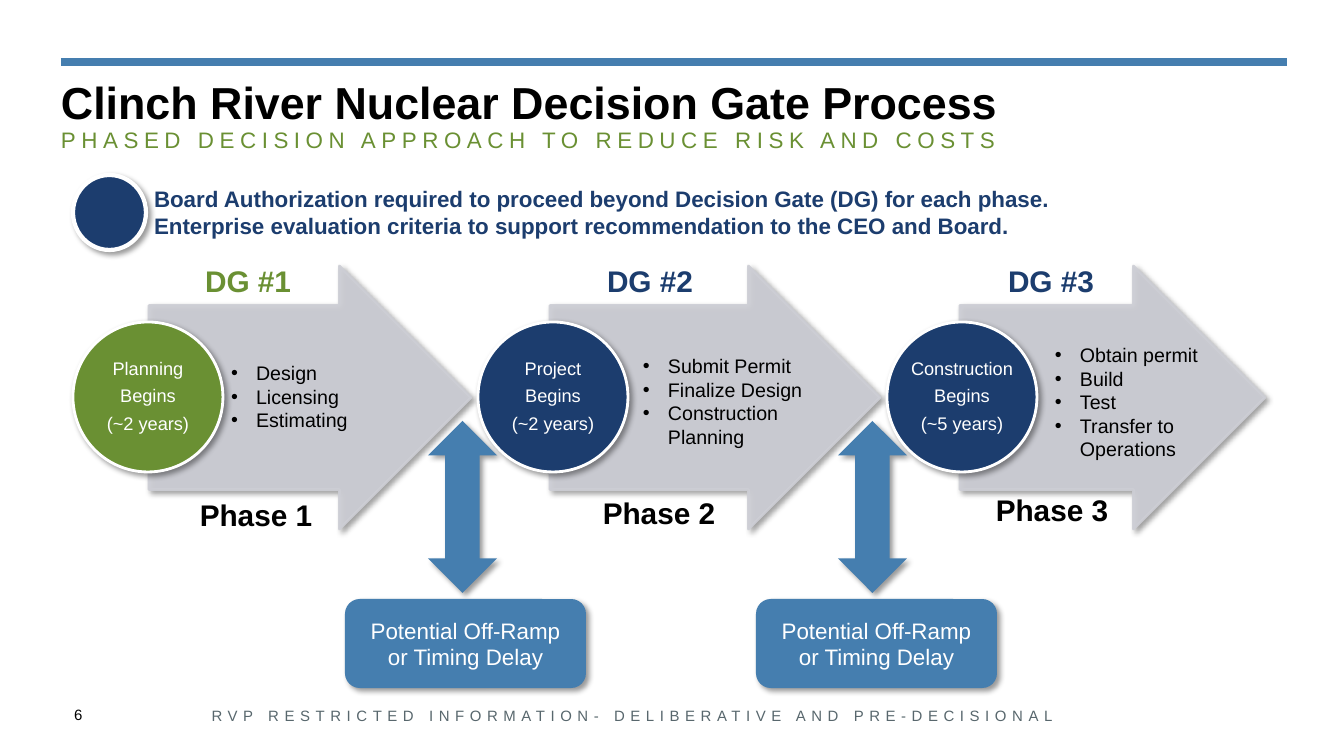
"""Build the Clinch River decision gate process slide."""
import pptx
import pptx.dml.color
import pptx.enum.shapes
import pptx.enum.text
import pptx.oxml.ns
import pptx.util
from lxml import etree

RGB = pptx.dml.color.RGBColor
BLUE = RGB(0x45, 0x7E, 0xAF)
NAVY = RGB(0x1C, 0x3D, 0x6E)
GREEN = RGB(0x6A, 0x90, 0x33)
SILVER = RGB(0xCD, 0xCE, 0xD5)
SLATE = RGB(0x58, 0x67, 0x6D)
WHITE = RGB(0xFF, 0xFF, 0xFF)
BLACK = RGB(0, 0, 0)

PX = 914400 / 100.8
SHAPE = pptx.enum.shapes.MSO_SHAPE
LEFT = pptx.enum.text.PP_ALIGN.LEFT
CENTER = pptx.enum.text.PP_ALIGN.CENTER
TOP = pptx.enum.text.MSO_ANCHOR.TOP
MIDDLE = pptx.enum.text.MSO_ANCHOR.MIDDLE
Pt = pptx.util.Pt
qn = pptx.oxml.ns.qn

deck = pptx.Presentation()
deck.slide_width = round(1344 * PX)
deck.slide_height = round(756 * PX)
slide = deck.slides.add_slide(deck.slide_layouts[6])


def add_form(kind, box, fill, outline=None, weight=0, opacity=100):
    """Add a filled preset shape with a soft drop shadow."""
    form = slide.shapes.add_shape(kind, *[round(v * PX) for v in box])
    form.fill.solid()
    form.fill.fore_color.rgb = fill
    if outline is None:
        form.line.fill.background()
    else:
        form.line.color.rgb = outline
        form.line.width = Pt(weight)
    properties = form._element.spPr
    if opacity < 100:
        for color in properties.iter(qn("a:srgbClr")):
            etree.SubElement(color, qn("a:alpha"), val=str(opacity * 1000))
    form.shadow.inherit = False
    shadow = etree.SubElement(properties.find(qn("a:effectLst")), qn("a:outerShdw"),
                              blurRad=str(Pt(4)), dist=str(Pt(3)), dir="2700000",
                              algn="tl", rotWithShape="0")
    black = etree.SubElement(shadow, qn("a:srgbClr"), val="000000")
    etree.SubElement(black, qn("a:alpha"), val="40000")
    return form


def write(target, text, size, color, bold=False, align=LEFT, anchor=TOP, inset=(10, 5)):
    """Write text into a shape, or into a new text box when given a box."""
    if isinstance(target, tuple):
        target = slide.shapes.add_textbox(*[round(v * PX) for v in target])
    frame = target.text_frame
    frame.word_wrap = True
    frame.vertical_anchor = anchor
    frame.margin_left = frame.margin_right = round(inset[0] * PX)
    frame.margin_top = frame.margin_bottom = round(inset[1] * PX)
    frame.text = text
    for paragraph in frame.paragraphs:
        paragraph.alignment = align
        for run in paragraph.runs:
            run.font.name = "Arial"
            run.font.size = Pt(size)
            run.font.color.rgb = color
            run.font.bold = bold
    return frame


top_rule = slide.shapes.add_connector(pptx.enum.shapes.MSO_CONNECTOR.STRAIGHT,
                                      *[round(v * PX) for v in (61, 62, 1287, 62)])
top_rule.line.color.rgb = BLUE
top_rule.line.width = Pt(6.25)
etree.SubElement(top_rule._element.spPr, qn("a:effectLst"))

footer = write((144, 702, 978, 30),
               "RVP RESTRICTED INFORMATION- DELIBERATIVE AND PRE-DECISIONAL",
               10.7, SLATE, align=CENTER)
write((64, 701, 54, 33), "6", 10.7, BLACK)

title = write((61, 81, 1210, 129),
              "Clinch River Nuclear Decision Gate Process\v"
              "PHASED DECISION APPROACH TO REDUCE RISK AND COSTS",
              32, BLACK, bold=True, inset=(0, 0))
title.paragraphs[0].line_spacing = 0.9
subtitle = title.paragraphs[0].runs[1]
subtitle.font.size = Pt(16)
subtitle.font.bold = False
subtitle.font.color.rgb = GREEN
for spaced_run in (subtitle, footer.paragraphs[0].runs[0]):
    spaced_run._r.get_or_add_rPr().set("spc", "400")

phases = [
    ((149, 322), 73, GREEN, "Planning\nBegins\n(~2 years)", 180, (175, 496),
     (221, 356, 183, 82), 25, "Design\nLicensing\nEstimating"),
    ((550, 330), 478, NAVY, "Project\nBegins\n(~2 years)", 582, (578, 494),
     (633, 349, 224, 105), 25, "Submit Permit\nFinalize Design\nConstruction Planning"),
    ((960, 305), 887, NAVY, "Construction\nBegins\n(~5 years)", 983, (971, 491),
     (1028, 338, 211, 129), 42, "Obtain permit\nBuild\nTest\nTransfer to Operations"),
]
for number, (arrow_span, gate_x, gate_color, milestone, gate_label_x, phase_label_at,
             tasks_box, tasks_indent, tasks) in enumerate(phases, 1):
    arrow_x, arrow_width = arrow_span
    arrow = add_form(SHAPE.RIGHT_ARROW, (arrow_x, 266, arrow_width, 263),
                     SILVER, SILVER, 2, opacity=90)
    arrow.adjustments[0] = 0.7
    arrow.adjustments[1] = 0.5

    gate = add_form(SHAPE.OVAL, (gate_x, 322, 150, 150), gate_color, WHITE, 2)
    for line in write(gate, milestone, 13, WHITE, align=CENTER, anchor=MIDDLE,
                      inset=(1, 1)).paragraphs:
        line.line_spacing = 0.9
        line.space_after = Pt(5.5)

    write((gate_label_x, 256, 136, 49), f"DG #{number}", 21.3, gate_color,
          bold=True, align=CENTER, anchor=MIDDLE, inset=(10, 0))
    write((*phase_label_at, 162, 38), f"Phase {number}", 21.3, BLACK,
          bold=True, align=CENTER, anchor=MIDDLE, inset=(10, 0))

    for task in write(tasks_box, tasks, 14, BLACK).paragraphs:
        layout = task._p.get_or_add_pPr()
        layout.set("marL", str(round(tasks_indent * PX)))
        layout.set("indent", str(round(-25 * PX)))
        etree.SubElement(layout, qn("a:buFont"), typeface="Arial")
        etree.SubElement(layout, qn("a:buChar"), char="•")

write((144, 175, 1112, 75),
      "Board Authorization required to proceed beyond Decision Gate (DG) for each phase.\n"
      "Enterprise evaluation criteria to support recommendation to the CEO and Board.",
      16, NAVY, bold=True, anchor=MIDDLE)
add_form(SHAPE.OVAL, (73, 175, 73, 75), NAVY, WHITE, 3)

for exit_x, off_ramp_x in ((428, 345), (838, 756)):
    add_form(SHAPE.UP_DOWN_ARROW, (exit_x, 421, 69, 172), BLUE)
    off_ramp = add_form(SHAPE.ROUNDED_RECTANGLE, (off_ramp_x, 599, 241, 89), BLUE)
    write(off_ramp, "Potential Off-Ramp or Timing Delay", 16, WHITE,
          align=CENTER, anchor=MIDDLE)

deck.save("out.pptx")
